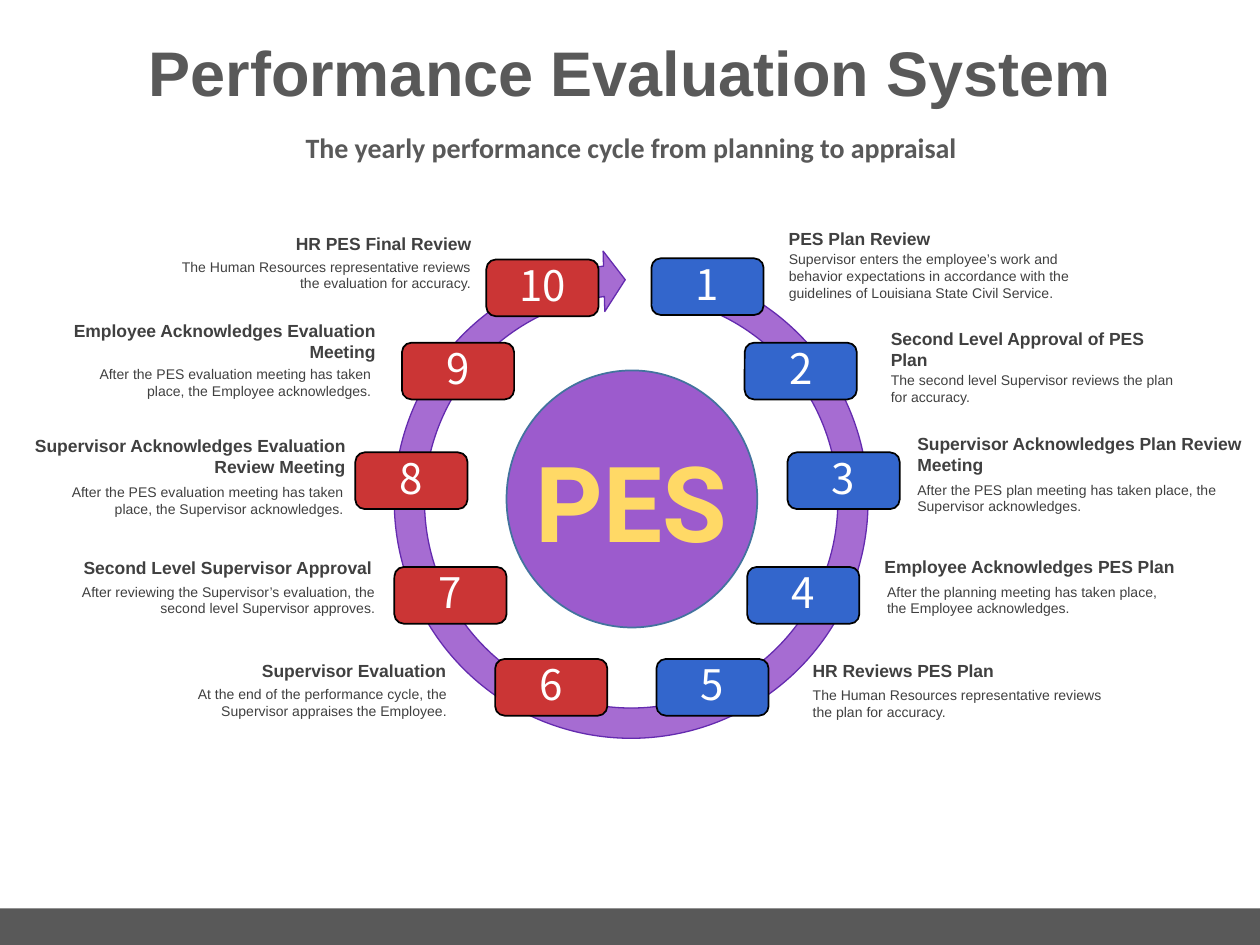
from pptx import Presentation
from pptx.dml.color import RGBColor
from pptx.enum.shapes import MSO_SHAPE
from pptx.enum.text import MSO_ANCHOR, MSO_AUTO_SIZE, PP_ALIGN
from pptx.oxml.ns import qn
from pptx.util import Inches, Pt

LEFT, CENTER, RIGHT = PP_ALIGN.LEFT, PP_ALIGN.CENTER, PP_ALIGN.RIGHT
TOP, MIDDLE = MSO_ANCHOR.TOP, MSO_ANCHOR.MIDDLE

GRAY = RGBColor(0x59, 0x59, 0x59)
TEXT = RGBColor(0x40, 0x40, 0x40)
BLACK = RGBColor(0, 0, 0)
WHITE = RGBColor(0xFF, 0xFF, 0xFF)
BLUE = RGBColor(0x33, 0x66, 0xCC)
RED = RGBColor(0xCB, 0x35, 0x35)
RING = RGBColor(0xA6, 0x6C, 0xD2)
RING_EDGE = RGBColor(0x64, 0x2B, 0xAF)
HUB = RGBColor(0x9C, 0x5B, 0xCD)
HUB_EDGE = RGBColor(0x43, 0x73, 0x9E)
GOLD = RGBColor(0xFF, 0xD9, 0x66)

BADGE_SIZE = (0.89, 0.45)
LABEL_INSETS = (0.09, 0.05)
PLANNING_STEPS = 5  # the remaining steps are the appraisal half

# Badge corner, heading, heading box, detail, detail box (left, top, width, height)
STEPS = [
    ((5.17, 2.05), "PES Plan Review", (6.17, 1.76, 2.5, 0.27),
     "Supervisor enters the employee’s work and behavior expectations in "
     "accordance with the guidelines of Louisiana State Civil Service.",
     (6.17, 1.94, 2.48, 0.5)),
    ((5.91, 2.72), "Second Level Approval of PES Plan", (6.98, 2.55, 2.5, 0.45),
     "The second level Supervisor reviews the plan for accuracy.",
     (6.98, 2.9, 2.48, 0.37)),
    ((6.25, 3.59), "Supervisor Acknowledges Plan Review Meeting",
     (7.19, 3.39, 2.81, 0.45),
     "After the PES plan meeting has taken place, the Supervisor acknowledges.",
     (7.19, 3.77, 2.79, 0.37)),
    ((5.93, 4.5), "Employee Acknowledges PES Plan", (6.93, 4.36, 2.5, 0.27),
     "After the planning meeting has taken place, the Employee acknowledges.",
     (6.95, 4.58, 2.48, 0.37)),
    ((5.21, 5.23), "HR Reviews PES Plan", (6.36, 5.19, 2.5, 0.28),
     "The Human Resources representative reviews the plan for accuracy.",
     (6.36, 5.4, 2.48, 0.37)),
    ((3.93, 5.23), "Supervisor Evaluation", (1.13, 5.19, 2.5, 0.28),
     "At the end of the performance cycle, the Supervisor appraises the Employee.",
     (1.26, 5.39, 2.38, 0.37)),
    ((3.13, 4.5), "Second Level Supervisor Approval", (0.54, 4.37, 2.5, 0.27),
     "After reviewing the Supervisor’s evaluation, the second level "
     "Supervisor approves.", (0.48, 4.58, 2.59, 0.37)),
    ((2.82, 3.59), "Supervisor Acknowledges Evaluation Review Meeting",
     (-0.21, 3.4, 3.04, 0.45),
     "After the PES evaluation meeting has taken place, the Supervisor "
     "acknowledges.", (0.18, 3.79, 2.64, 0.37)),
    ((3.19, 2.72), "Employee Acknowledges Evaluation Meeting",
     (0.31, 2.49, 2.76, 0.45),
     "After the PES evaluation meeting has taken place, the Employee "
     "acknowledges.", (0.56, 2.85, 2.48, 0.37)),
    ((3.86, 2.06), "HR PES Final Review", (1.33, 1.8, 2.5, 0.28),
     "The Human Resources representative reviews the evaluation for accuracy.",
     (1.33, 2, 2.5, 0.37)),
]


def write(shape, text, *, size, color, font="Arial", bold=False, align=LEFT,
          anchor=TOP, line_spacing=None, insets=(0.1, 0.05)):
    frame = shape.text_frame
    frame.word_wrap = True
    frame.auto_size = MSO_AUTO_SIZE.NONE
    frame.vertical_anchor = anchor
    frame.margin_left = frame.margin_right = Inches(insets[0])
    frame.margin_top = frame.margin_bottom = Inches(insets[1])
    paragraph = frame.paragraphs[0]
    paragraph.alignment = align
    paragraph.line_spacing = line_spacing
    paragraph.space_before = Pt(0)
    run = paragraph.add_run()
    run.text = text
    run.font.name = font
    run.font.size = Pt(size)
    run.font.bold = bold
    run.font.color.rgb = color


def place(shape, left, top, width, height):
    shape.left, shape.top = Inches(left), Inches(top)
    shape.width, shape.height = Inches(width), Inches(height)


def add_filled(slide, preset, box, fill, line=None, line_width=1):
    shape = slide.shapes.add_shape(preset, *map(Inches, box))
    shape.shadow.inherit = False
    shape.fill.solid()
    shape.fill.fore_color.rgb = fill
    if line is None:
        shape.line.fill.background()
    else:
        shape.line.color.rgb = line
        shape.line.width = Pt(line_width)
    return shape


def add_label(slide, text, box, **style):
    write(slide.shapes.add_textbox(*map(Inches, box)), text, **style)


def add_headings(slide):
    title, subtitle = slide.placeholders
    place(title, 0, 0.18, 10, 0.85)
    place(subtitle, 0, 0.96, 10.02, 0.45)
    properties = subtitle.text_frame.paragraphs[0]._p.get_or_add_pPr()
    properties.set("marL", "0")
    properties.set("indent", "0")
    properties.append(properties.makeelement(qn("a:buNone"), {}))
    style = dict(color=GRAY, bold=True, align=CENTER, anchor=MIDDLE,
                 line_spacing=0.9)
    write(title, "Performance Evaluation System", size=36, **style)
    write(subtitle, "The yearly performance cycle from planning to appraisal",
          size=16, font="Calibri", **style)


def add_step(slide, number, corner, heading, heading_box, detail, detail_box):
    planning = number <= PLANNING_STEPS
    badge = add_filled(slide, MSO_SHAPE.ROUNDED_RECTANGLE, corner + BADGE_SIZE,
                       BLUE if planning else RED, BLACK)
    write(badge, str(number), size=24, color=WHITE, font="Noto Sans CJK JP",
          align=CENTER, anchor=MIDDLE, line_spacing=0.9, insets=(0, 0))
    style = dict(color=TEXT, align=LEFT if planning else RIGHT,
                 insets=LABEL_INSETS)
    add_label(slide, detail, detail_box, size=8, **style)
    add_label(slide, heading, heading_box, size=10, bold=True, **style)


def main():
    presentation = Presentation()
    presentation.slide_width, presentation.slide_height = Inches(10), Inches(7.5)
    slide = presentation.slides.add_slide(presentation.slide_layouts[1])
    add_headings(slide)
    add_filled(slide, MSO_SHAPE.RECTANGLE, (0, 7.21, 10, 0.29), GRAY)

    ring = add_filled(slide, MSO_SHAPE.CIRCULAR_ARROW, (3.01, 1.98, 4, 4),
                      RING, RING_EDGE, 0.75)
    ring.rotation = 14.5
    for index, value in enumerate((0.06, 3.31, 149.07, 167.29, 0.06)):
        ring.adjustments[index] = value

    for number, step in enumerate(STEPS, start=1):
        add_step(slide, number, *step)

    add_filled(slide, MSO_SHAPE.OVAL, (4.02, 2.94, 1.99, 2.04), HUB, HUB_EDGE)
    add_label(slide, "PES", (4.12, 3.42, 1.78, 1.11), size=60, color=GOLD,
              font="Roboto", bold=True, align=CENTER)
    presentation.save("out.pptx")


if __name__ == "__main__":
    main()
